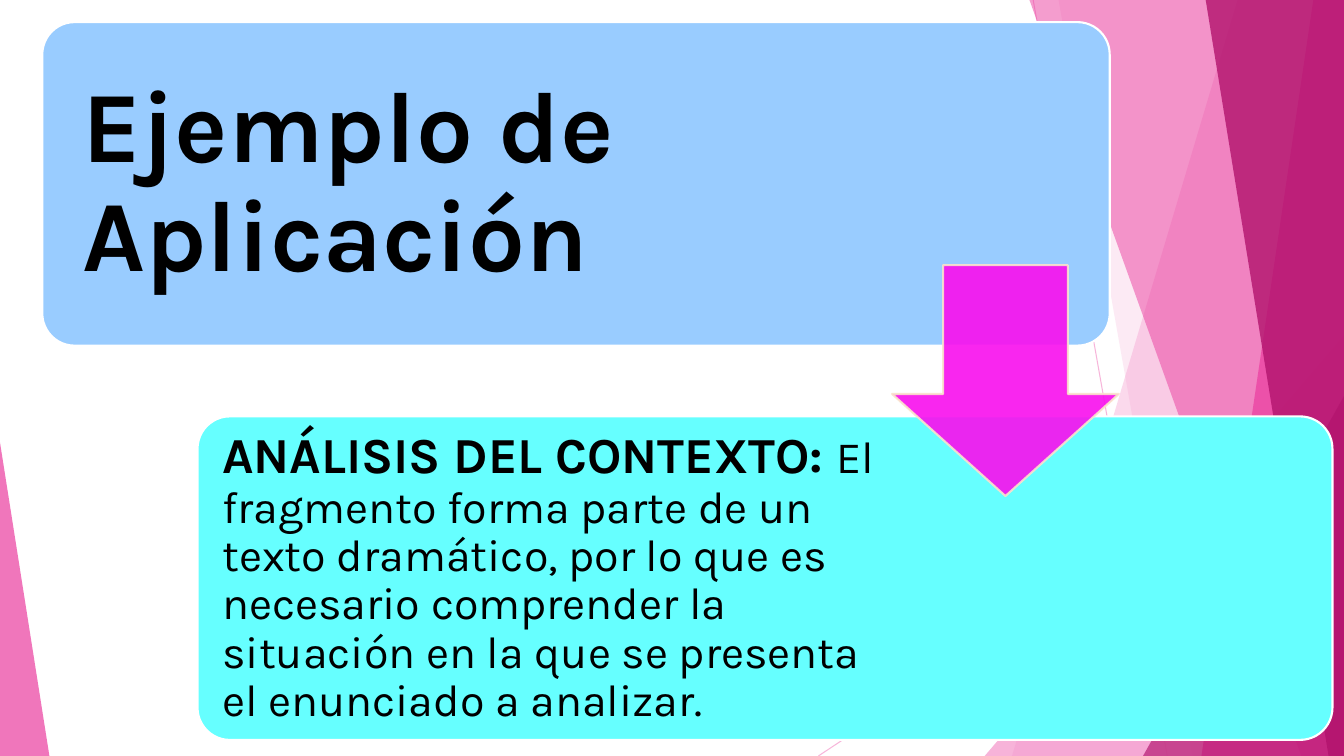
from dataclasses import dataclass

import pptx
import pptx.dml.color
import pptx.enum.shapes
import pptx.enum.text
import pptx.oxml
import pptx.oxml.ns
import pptx.util
from lxml import etree

Pt = pptx.util.Pt
Preset = pptx.enum.shapes.MSO_SHAPE


@dataclass(frozen=True)
class Theme:
    width: float = 960
    height: float = 540
    font: str = "Karla"
    title_size: float = 72
    heading_size: float = 36
    body_size: float = 32
    text: str = "000000"
    card_line: str = "FFFFFF"
    title_card: str = "99CCFF"
    context_card: str = "66FFFF"
    arrow: str = "F90FEE"
    arrow_line: str = "FAE3CC"
    light_pink: str = "F496CB"
    pink: str = "EB3D9F"
    dark_pink: str = "B2136D"
    thin_line: float = 0.75
    outline: float = 1.5


class SlideBuilder:
    def __init__(self, slide, theme):
        self.shapes = slide.shapes
        self.theme = theme

    def paint(self, color_format, color, opacity=100):
        """Set a fill's or line's colour, with opacity in percent."""
        color_format.solid()
        color_format.fore_color.rgb = pptx.dml.color.RGBColor.from_string(color)
        if opacity < 100:
            # The proxy for the colour has no opacity setting, so add it in XML.
            for element in color_format._xPr.iter(pptx.oxml.ns.qn("a:srgbClr")):
                if element.getparent().getparent() is color_format._xPr:
                    alpha = etree.SubElement(element, pptx.oxml.ns.qn("a:alpha"))
                    alpha.set("val", str(opacity * 1000))

    def style(self, shape, fill, opacity=100, line=None):
        shape.shadow.inherit = False
        self.paint(shape.fill, fill, opacity)
        if line is None:
            shape.line.fill.background()
        else:
            self.paint(shape.line.fill, line, opacity)
            shape.line.width = Pt(self.theme.outline)

    def shape(self, preset, box, adjustments, fill, opacity=100, line=None):
        shape = self.shapes.add_shape(preset, *map(Pt, box))
        for index, value in enumerate(adjustments):
            shape.adjustments[index] = value
        self.style(shape, fill, opacity, line)

    def band(self, top_left, bottom_left, fill, opacity):
        """Fill the slide from a slanted left edge to its right side."""
        top, right, bottom = -0.72, self.theme.width, self.theme.height
        corners = [(right, top), (right, bottom), (bottom_left, bottom)]
        builder = self.shapes.build_freeform(Pt(top_left), Pt(top), scale=1.0)
        builder.add_line_segments([(Pt(x), Pt(y)) for x, y in corners], close=True)
        self.style(builder.convert_to_shape(), fill, opacity)

    def line(self, start, end, color, opacity):
        connector = self.shapes.add_connector(
            pptx.enum.shapes.MSO_CONNECTOR.STRAIGHT, *map(Pt, start + end))
        self.paint(connector.line.fill, color, opacity)
        connector.line.width = Pt(self.theme.thin_line)
        etree.SubElement(connector._element.spPr, pptx.oxml.ns.qn("a:effectLst"))

    def text(self, box, inset, runs):
        """Add one paragraph; each run is (text, size, bold)."""
        frame = self.shapes.add_textbox(*map(Pt, box)).text_frame
        frame.word_wrap = True
        frame.vertical_anchor = pptx.enum.text.MSO_ANCHOR.MIDDLE
        frame.margin_left = frame.margin_right = Pt(inset)
        frame.margin_top = frame.margin_bottom = Pt(inset)
        paragraph = frame.paragraphs[0]
        paragraph.line_spacing = 0.9
        for words, size, bold in runs:
            run = paragraph.add_run()
            run.text = words
            run.font.name = self.theme.font
            run.font.size = Pt(size)
            run.font.bold = bold
            run.font.color.rgb = pptx.dml.color.RGBColor.from_string(self.theme.text)

    def card(self, box, fill, text_width, inset, runs):
        """Draw a rounded card with a narrower text area at its left."""
        left, top, width, height = box
        padding = 6.8
        self.shape(Preset.ROUNDED_RECTANGLE, box, [0.1], fill, line=self.theme.card_line)
        text_box = (left + padding, top + padding, text_width, height - 2 * padding)
        self.text(text_box, inset, runs)


def draw_background(builder):
    theme = builder.theme
    builder.line((738, 0), (833.8, 540), theme.light_pink, 70)
    builder.line((960, 290.2), (584.6, 540), theme.light_pink, 70)
    builder.band(884.2, 722.9, theme.light_pink, 36)
    builder.band(756, 851.8, theme.light_pink, 20)
    builder.shape(Preset.ISOSCELES_TRIANGLE, (703.4, 239.8, 256.6, 300.2), [1],
                  theme.light_pink, 72)
    builder.band(735.1, 929.5, theme.pink, 50)
    builder.band(938.2, 858.2, theme.pink, 70)
    builder.band(861.1, 949, theme.dark_pink, 80)
    builder.shape(Preset.ISOSCELES_TRIANGLE, (816.5, 283, 143.5, 257), [1],
                  theme.dark_pink, 66)
    builder.shape(Preset.ISOSCELES_TRIANGLE, (0, 316.1, 35.3, 223.9), [0],
                  theme.pink, 70)


def draw_content(builder):
    theme = builder.theme
    builder.card((30.2, 15.8, 762.5, 231.1), theme.title_card, 524.2, 21.6,
                 [("Ejemplo de Aplicación", theme.title_size, True)])
    builder.card((141.1, 297.4, 810.7, 231.1), theme.context_card, 494.6, 10.8, [
        ("ANÁLISIS DEL CONTEXTO: ", theme.heading_size, True),
        ("El fragmento forma parte de un texto dramático, por lo que es necesario "
         "comprender la situación en la que se presenta el enunciado a analizar.",
         theme.body_size, False),
    ])
    builder.shape(Preset.DOWN_ARROW, (637.2, 189.4, 162, 164.9), [0.55, 0.45],
                  theme.arrow, 90, theme.arrow_line)


def main():
    theme = Theme()
    presentation = pptx.Presentation()
    presentation.slide_width = Pt(theme.width)
    presentation.slide_height = Pt(theme.height)
    slide = presentation.slides.add_slide(presentation.slide_layouts[6])
    builder = SlideBuilder(slide, theme)
    draw_background(builder)
    draw_content(builder)
    presentation.save("out.pptx")


if __name__ == "__main__":
    main()
